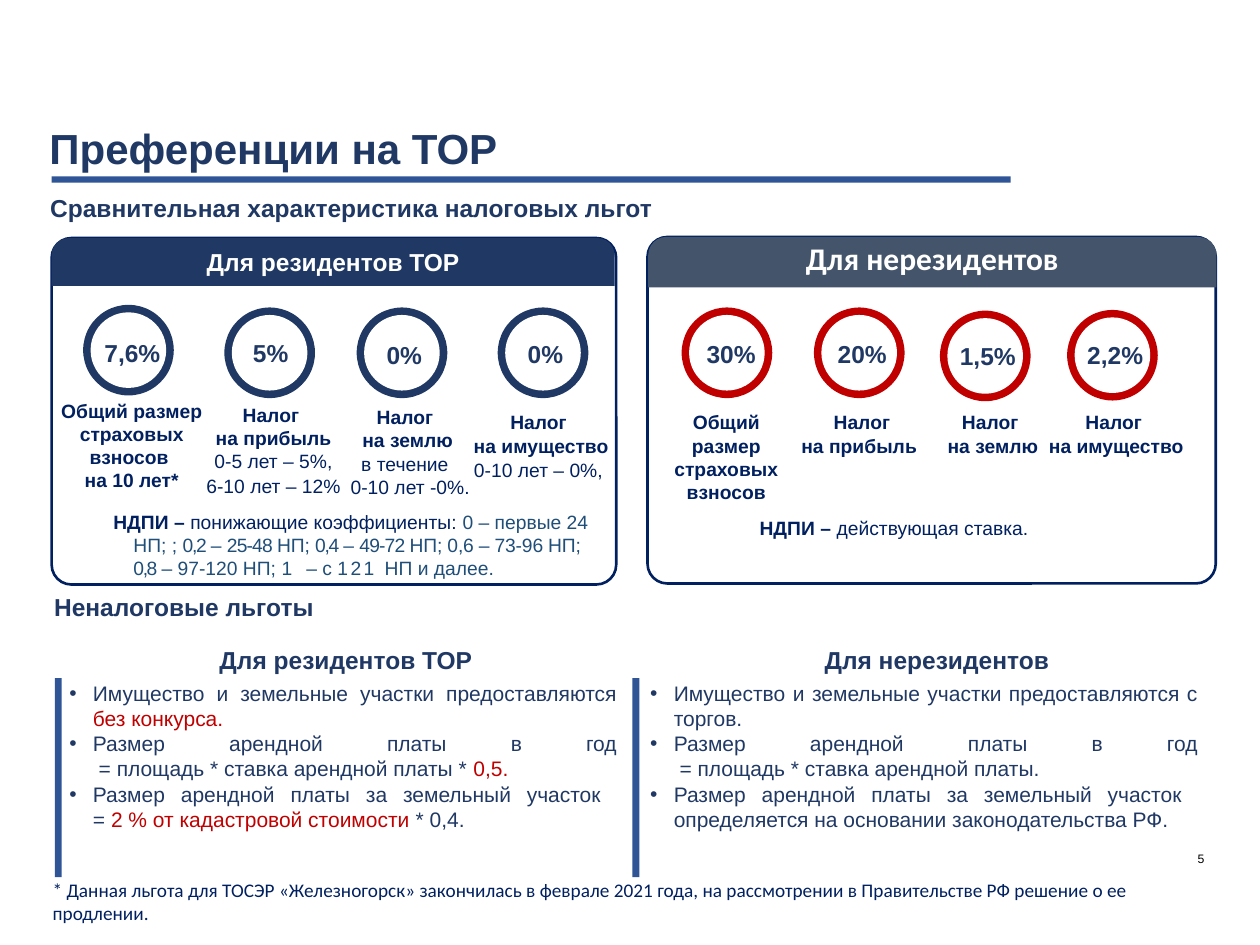
from copy import deepcopy
from dataclasses import dataclass

from lxml import etree
from pptx import Presentation
from pptx import util as u
from pptx.dml.color import RGBColor
from pptx.enum import shapes, text
from pptx.oxml.ns import qn

Pt = u.Pt
ALIGN = text.PP_ALIGN
ANCHOR = text.MSO_ANCHOR
SHAPE = shapes.MSO_SHAPE
PADDED = (7.2, 3.6, 7.2, 3.6)
FLUSH = (0, 0, 0, 0)


@dataclass(frozen=True)
class Theme:
    navy: str = "203864"
    deep: str = "002060"
    blue: str = "2F5597"
    steel: str = "1F4E79"
    slate: str = "44546A"
    red: str = "C00000"
    white: str = "FFFFFF"
    black: str = "000000"
    font: str = "Arial"
    alt_font: str = "Calibri"
    title: float = 24
    large: float = 18
    heading: float = 14
    body: float = 12
    small: float = 11
    tiny: float = 7


class SlideBuilder:
    def __init__(self, slide, theme):
        self.slide = slide
        self.theme = theme

    def place(self, shape, box):
        shape.left, shape.top, shape.width, shape.height = map(Pt, box)

    def fill_text(self, shape, paragraphs, size, color, bold=False, font=None,
                  align=ALIGN.LEFT, anchor=ANCHOR.TOP, insets=PADDED, gap=0,
                  spacing=None, hanging=None, bullet=None):
        """Each paragraph is a list of (text, style) runs."""
        frame = shape.text_frame
        frame.word_wrap = True
        frame.auto_size = text.MSO_AUTO_SIZE.NONE
        frame.vertical_anchor = anchor
        (frame.margin_left, frame.margin_top,
         frame.margin_right, frame.margin_bottom) = map(Pt, insets)
        for index, runs in enumerate(paragraphs):
            paragraph = frame.add_paragraph() if index else frame.paragraphs[0]
            paragraph.alignment = align
            paragraph.space_before = Pt(gap if index else 0)
            if spacing:
                paragraph.line_spacing = spacing
            properties = paragraph._p.get_or_add_pPr()
            if hanging:
                left, first = hanging
                properties.set("marL", str(Pt(left)))
                properties.set("indent", str(Pt(first)))
            if bullet:
                etree.SubElement(properties, qn("a:buFont"), typeface=self.theme.font)
                etree.SubElement(properties, qn("a:buChar"), char=bullet)
            for content, style in runs:
                self.add_run(paragraph, content, {
                    "size": size, "color": color, "bold": bold,
                    "font": font or self.theme.font, **style})

    def add_run(self, paragraph, content, style):
        for index, line in enumerate(content.split("\n")):
            if index:
                paragraph.add_line_break()
            run = paragraph.add_run()
            run.text = line
            run.font.size = Pt(style["size"])
            run.font.bold = style["bold"]
            run.font.name = style["font"]
            run.font.color.rgb = RGBColor.from_string(style["color"])
            properties = run._r.get_or_add_rPr()
            if "tracking" in style:
                properties.set("spc", str(round(style["tracking"] * 100)))
            if index:  # the break keeps the line height of its run
                run._r.getprevious().append(deepcopy(properties))

    def placeholder(self, index, box, paragraphs, size, color, **options):
        shape = self.slide.placeholders[index]
        self.place(shape, box)
        self.fill_text(shape, paragraphs, size, color, **options)

    def text_box(self, box, paragraphs, size, color, **options):
        if isinstance(paragraphs, str):
            paragraphs = [[(paragraphs, {})]]
        shape = self.slide.shapes.add_textbox(*map(Pt, box))
        self.fill_text(shape, paragraphs, size, color, **options)

    def heading(self, box, content, **options):
        self.text_box(box, content, self.theme.heading, self.theme.navy,
                      bold=True, **options)

    def shape(self, kind, box, fill, line=None, corners=()):
        shape = self.slide.shapes.add_shape(kind, *map(Pt, box))
        shape.shadow.inherit = False
        for index, value in enumerate(corners):
            shape.adjustments[index] = value
        shape.fill.solid()
        shape.fill.fore_color.rgb = RGBColor.from_string(fill)
        if line:
            shape.line.color.rgb = RGBColor.from_string(line)
            shape.line.width = Pt(1.5)
        else:
            shape.line.fill.background()
        return shape

    def card(self, box, header_box, title, fill, size, font):
        self.shape(SHAPE.ROUNDED_RECTANGLE, box, self.theme.white,
                   self.theme.deep, [0.057])
        header = self.shape(SHAPE.ROUND_2_SAME_RECTANGLE, header_box, fill,
                            corners=[0.36, 0])
        self.fill_text(header, [[(title, {})]], size, self.theme.white, bold=True,
                       font=font, align=ALIGN.CENTER, anchor=ANCHOR.MIDDLE,
                       insets=(7.2, 0, 7.2, 3.6), spacing=Pt(17.7))

    def rate(self, color, ring, value, value_box, label, label_box):
        """A ring with its percentage and the tax name below it."""
        left, top = ring
        outer, rim = 51.8, 4.3
        inner = outer - 2 * rim
        self.shape(SHAPE.OVAL, (left, top, outer, outer), color)
        self.shape(SHAPE.OVAL, (left + rim, top + rim, inner, inner), self.theme.white)
        self.heading((*value_box, 24.5), value)
        self.text_box(label_box, label, self.theme.small, self.theme.deep,
                      align=ALIGN.CENTER, insets=FLUSH, gap=0.9)


def main():
    theme = Theme()
    presentation = Presentation()
    presentation.slide_width, presentation.slide_height = Pt(720), Pt(540)
    slide = presentation.slides.add_slide(presentation.slide_layouts[3])
    builder = SlideBuilder(slide, theme)
    bold, red = {"bold": True}, {"color": theme.red}

    # Title and rule
    builder.placeholder(0, (21.6, 72.7, 342.7, 27.4),
                        [[("Преференции на ТОР", {})]], theme.title, theme.navy,
                        bold=True, anchor=ANCHOR.MIDDLE, insets=(6.67, 0, 0, 0),
                        spacing=0.9)
    builder.shape(SHAPE.RECTANGLE, (29.5, 100.8, 548, 3.6), theme.blue)
    builder.heading((21.6, 106.6, 362.2, 24.5),
                    "Сравнительная характеристика налоговых льгот")

    # Tax cards
    builder.card((29.5, 136, 322.6, 198), (29.5, 136, 321.8, 27.4),
                 "Для резидентов ТОР", theme.navy, theme.heading, theme.font)
    builder.card((370, 135.4, 324.7, 198), (370.4, 135.4, 324.7, 28.8),
                 "Для нерезидентов", theme.slate, theme.large, theme.alt_font)

    # Resident rates, then non-resident rates
    resident_rates = [
        ((47.5, 174.2), "7,6%", (52.6, 189.4, 47.5),
         [[("Общий размер страховых взносов \nна 10 лет*", bold)]],
         (34.6, 228.2, 81.4, 53.3)),
        ((128.2, 175.7), "5%", (137.5, 189.4, 43.2),
         [[("Налог \nна прибыль\n", bold), ("0-5 лет – 5%,", {})],
          [("6-10 лет – 12%", {})]], (113.8, 230.4, 85, 54)),
        ((203.8, 175.7), "0%", (213.8, 190.8, 35.3),
         [[("Налог \nна землю\n", bold), ("в течение \n 0-10 лет -0%.", {})]],
         (195.1, 231.8, 75.6, 53.3)),
        ((284.4, 175.7), "0%", (294.5, 190.1, 38.9),
         [[("Налог \nна имущество", bold)], [("0-10 лет – 0%, ", {})]],
         (262.8, 234.7, 92.9, 41)),
    ]
    other_rates = [
        ((389.5, 175.7), "30%", (396.7, 190.1, 62.6),
         [[("Общий размер страховых взносов", bold)]], (375.8, 234.7, 78.5, 53.3)),
        ((465.1, 175.7), "20%", (471.6, 190.1, 44.6),
         [[("Налог\nна прибыль ", bold)]], (450, 234.7, 85, 26.6)),
        ((537.1, 177.5), "1,5%", (541.4, 191.5, 49),
         [[("Налог \nна землю", bold)]], (535, 234.7, 64.8, 26.6)),
        ((609.8, 177.1), "2,2%", (614.2, 190.8, 62.6),
         [[("Налог \nна имущество", bold)]], (591.8, 234.7, 92.2, 26.6)),
    ]
    for color, rates in ((theme.navy, resident_rates), (theme.red, other_rates)):
        for rate in rates:
            builder.rate(color, *rate)

    # Mineral extraction tax
    coefficients = [
        ("0 – первые 24 НП; ; ", 0), ("0,2 ", -0.8), ("– ", 0), ("25-48 ", -0.5),
        ("НП; ", -0.1), ("0,4 ", -0.8), ("– ", 0), ("49-72 ", -0.5),
        ("НП; 0,6 – 73-96 НП; ", -0.1), ("0,8 ", -0.8), ("– 97-120 НП; ", 0),
        ("1 ", 2.4), ("– с ", 0), ("121 ", 1.4), ("НП и далее.", 0)]
    reduced = [("понижающие коэффициенты: ", {})] + [
        (part, {"color": theme.steel, "tracking": tracking})
        for part, tracking in coefficients]
    for box, runs in (((-15.1, 291.6, 355, 69.8), reduced),
                      ((354.2, 295.2, 355, 43.2), [("действующая ставка.", {})])):
        builder.text_box(box, [[("НДПИ – ", bold), *runs]], theme.small, theme.deep,
                         insets=FLUSH, hanging=(91.4, -11.5))

    # Non-tax benefits
    builder.heading((23.8, 334.8, 207.4, 24.5), "Неналоговые льготы")
    rent = "Размер арендной платы в год\n = площадь * ставка арендной платы"
    land = "Размер арендной платы за земельный участок \n"
    property_offer = "Имущество и земельные участки предоставляются "
    columns = [
        (1, 32.4, 31.3, 82.1, "Для резидентов ТОР", [
            [(property_offer, {}), ("без конкурса.", red)],
            [(rent + " * ", {}), ("0,5.", red)],
            [(land + "= ", {}), ("2 % от кадастровой стоимости ", red),
             ("* 0,4.", {})]]),
        (2, 364.3, 361.4, 419.8, "Для нерезидентов", [
            [(property_offer + "с торгов.", {})],
            [(rent + ".", {})],
            [(land + "определяется на основании законодательства РФ.", {})]]),
    ]
    for index, left, bar_left, heading_left, title, benefits in columns:
        builder.heading((heading_left, 365, 231.1, 24.5), title, align=ALIGN.CENTER)
        builder.shape(SHAPE.RECTANGLE, (bar_left, 387.5, 4, 113.8), theme.blue)
        builder.placeholder(index, (left, 385.2, 327.6, 94.3), benefits, theme.body,
                            theme.navy, align=ALIGN.JUSTIFY,
                            hanging=(13.5, -13.5), bullet="•")

    # Footnote and page number
    builder.text_box((23, 498.2, 641.5, 33.8),
                     "* Данная льгота для ТОСЭР «Железногорск» закончилась в феврале "
                     "2021 года, на рассмотрении в Правительстве РФ решение о ее "
                     "продлении.", theme.small, theme.deep, font=theme.alt_font)
    builder.text_box((644.4, 480.2, 43.9, 14.4), "5", theme.tiny, theme.black,
                     align=ALIGN.RIGHT, anchor=ANCHOR.BOTTOM, insets=FLUSH)

    presentation.save("out.pptx")


if __name__ == "__main__":
    main()
